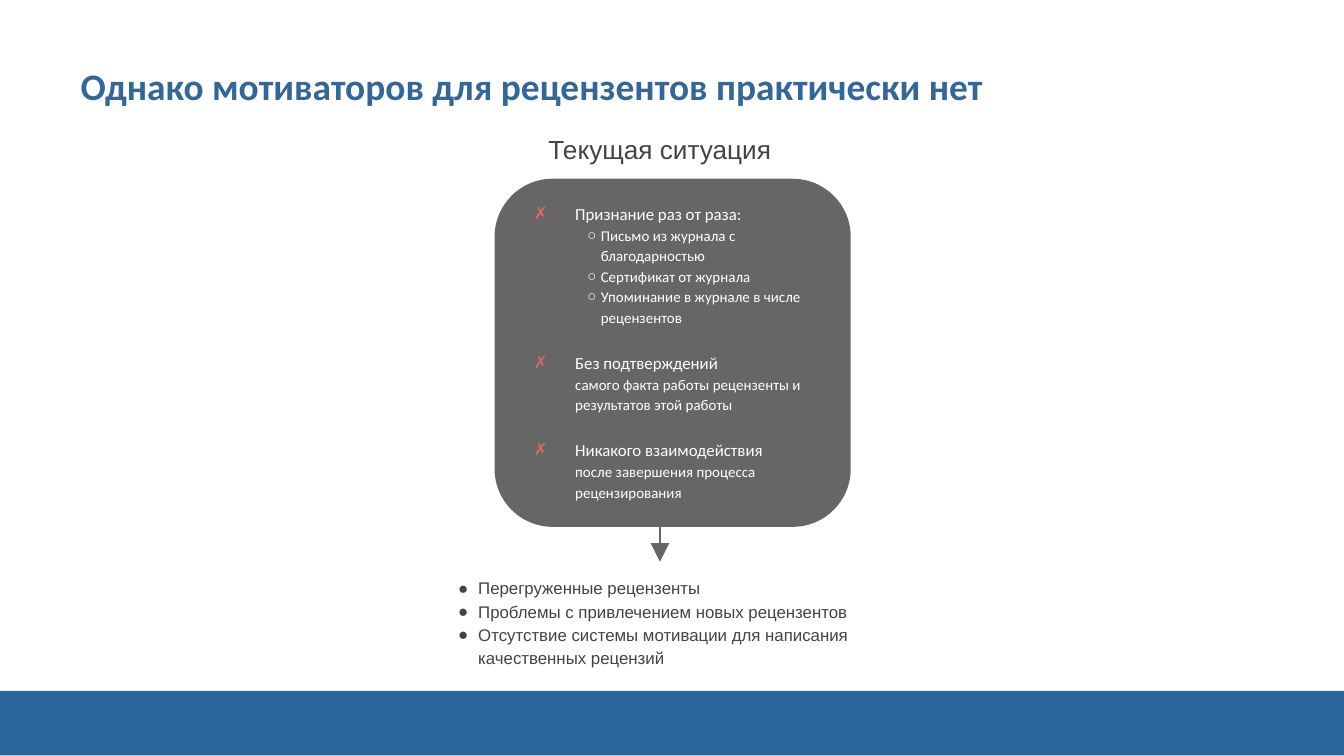
import pptx
import pptx.dml.color
import pptx.enum.shapes
import pptx.enum.text
import pptx.oxml
import pptx.oxml.ns
import pptx.util
from pptx.util import Inches

GRAY, DARK, WHITE = "666666", "434343", "FFFFFF"
ALIGN = pptx.enum.text.PP_ALIGN
SHAPE = pptx.enum.shapes.MSO_SHAPE
NS = pptx.oxml.ns.nsdecls("a")


def rgb(value):
    return pptx.dml.color.RGBColor.from_string(value)


def format_bullet(paragraph, mark, color, left, hanging):
    """Give a list paragraph its bullet, indent and spacing."""
    props = paragraph._p.get_or_add_pPr()
    props.set("marL", str(Inches(left)))
    props.set("indent", str(-Inches(hanging)))
    props.append(pptx.oxml.parse_xml(
        f'<a:buClr {NS}><a:srgbClr val="{color}"/></a:buClr>'))
    props.append(pptx.oxml.parse_xml(f'<a:buFont {NS} typeface="Arial"/>'))
    props.append(pptx.oxml.parse_xml(f'<a:buChar {NS} char="{mark}"/>'))
    paragraph.alignment = ALIGN.LEFT
    paragraph.line_spacing = 1.15
    paragraph.space_before = pptx.util.Pt(0)


# Widescreen 16:9 slide
prs = pptx.Presentation()
prs.slide_width = Inches(10)
prs.slide_height = Inches(10) * 9 // 16
slide = prs.slides.add_slide(prs.slide_layouts[1])
shapes = slide.shapes
title, situation = shapes.title, slide.placeholders[1]

# Footer band and dark panel
for kind, color, box in (
    (SHAPE.RECTANGLE, "2B639B", (0, 5.14, 10, 0.48)),
    (SHAPE.ROUNDED_RECTANGLE, GRAY, (3.68, 1.33, 2.65, 2.59)),
):
    panel = shapes.add_shape(kind, *map(Inches, box))
    panel.shadow.inherit = False
    panel.fill.solid()
    panel.fill.fore_color.rgb = rgb(color)
    panel.line.fill.background()

# Text frames: position, top inset
shapes._spTree.append(situation._element)
heading = shapes.add_textbox(0, 0, 0, 0)
outcome = shapes.add_textbox(0, 0, 0, 0)
for holder, box, top_inset in (
    (title, (0.5, 0.41, 9, 0.58), 0.06),
    (situation, (3.68, 1.43, 2.48, 2.49), 0.06),
    (heading, (3.69, 0.89, 2.44, 0.24), 0.1),
    (outcome, (3.31, 4.18, 3.21, 0.83), 0.1),
):
    holder.left, holder.top, holder.width, holder.height = map(Inches, box)
    frame = holder.text_frame
    frame.word_wrap = True
    frame.auto_size = pptx.enum.text.MSO_AUTO_SIZE.NONE
    frame.vertical_anchor = pptx.enum.text.MSO_ANCHOR.TOP
    frame.margin_left = frame.margin_right = Inches(0.1)
    frame.margin_top = frame.margin_bottom = Inches(top_inset)

# Title and panel heading
for holder, text, align, size, font, color, bold in (
    (title, "Однако мотиваторов для рецензентов практически нет",
     ALIGN.LEFT, 20, "Calibri", "336699", True),
    (heading, "Текущая ситуация", ALIGN.CENTER, 14, "Arial", DARK, False),
):
    line = holder.text_frame.paragraphs[0]
    line.text = text
    line.alignment = align
    line.font.size = pptx.util.Pt(size)
    line.font.name = font
    line.font.bold = bold
    line.font.color.rgb = rgb(color)

# Current situation: (level, lead, detail under the lead)
points = [
    (0, "Признание раз от раза:", ""),
    (1, "Письмо из журнала с благодарностью", ""),
    (1, "Сертификат от журнала", ""),
    (1, "Упоминание в журнале в числе рецензентов", ""),
    (0, "Без подтверждений",
     "самого факта работы рецензенты и результатов этой работы"),
    (0, "Никакого взаимодействия",
     "после завершения процесса рецензирования"),
]
frame = situation.text_frame
for i, (level, lead, detail) in enumerate(points):
    point = frame.add_paragraph() if i else frame.paragraphs[0]
    point.level = level
    if level:
        format_bullet(point, "○", WHITE, 0.69, 0.1)
    else:
        format_bullet(point, "✗", "E06666", 0.5, 0.31)
    if detail:
        point.space_before = pptx.util.Pt(12.5)
    point.font.name = "Calibri"
    point.font.color.rgb = rgb(WHITE)
    point.font.size = pptx.util.Pt(8 if level else 9)
    point.add_run().text = lead
    if detail:
        point.add_line_break()
        detail_run = point.add_run()
        detail_run.text = detail
        detail_run.font.size = pptx.util.Pt(8)

# Outcome list
frame = outcome.text_frame
for i, text in enumerate((
    "Перегруженные рецензенты",
    "Проблемы с привлечением новых рецензентов",
    "Отсутствие системы мотивации для написания качественных рецензий",
)):
    result = frame.add_paragraph() if i else frame.paragraphs[0]
    result.text = text
    format_bullet(result, "●", DARK, 0.15, 0.15)
    result.font.size = pptx.util.Pt(9)
    result.font.name = "Arial"
    result.font.color.rgb = rgb(DARK)

# Arrow from the panel to the outcome
arrow = shapes.add_connector(
    pptx.enum.shapes.MSO_CONNECTOR.STRAIGHT,
    Inches(4.91), Inches(3.92), Inches(4.91), Inches(4.18))
arrow.line.color.rgb = rgb(GRAY)
arrow.line.width = pptx.util.Pt(0.75)
arrow.line._get_or_add_ln().append(pptx.oxml.parse_xml(
    f'<a:tailEnd {NS} type="triangle" w="lg" len="lg"/>'))
arrow._element.spPr.append(pptx.oxml.parse_xml(f"<a:effectLst {NS}/>"))

prs.save("out.pptx")
